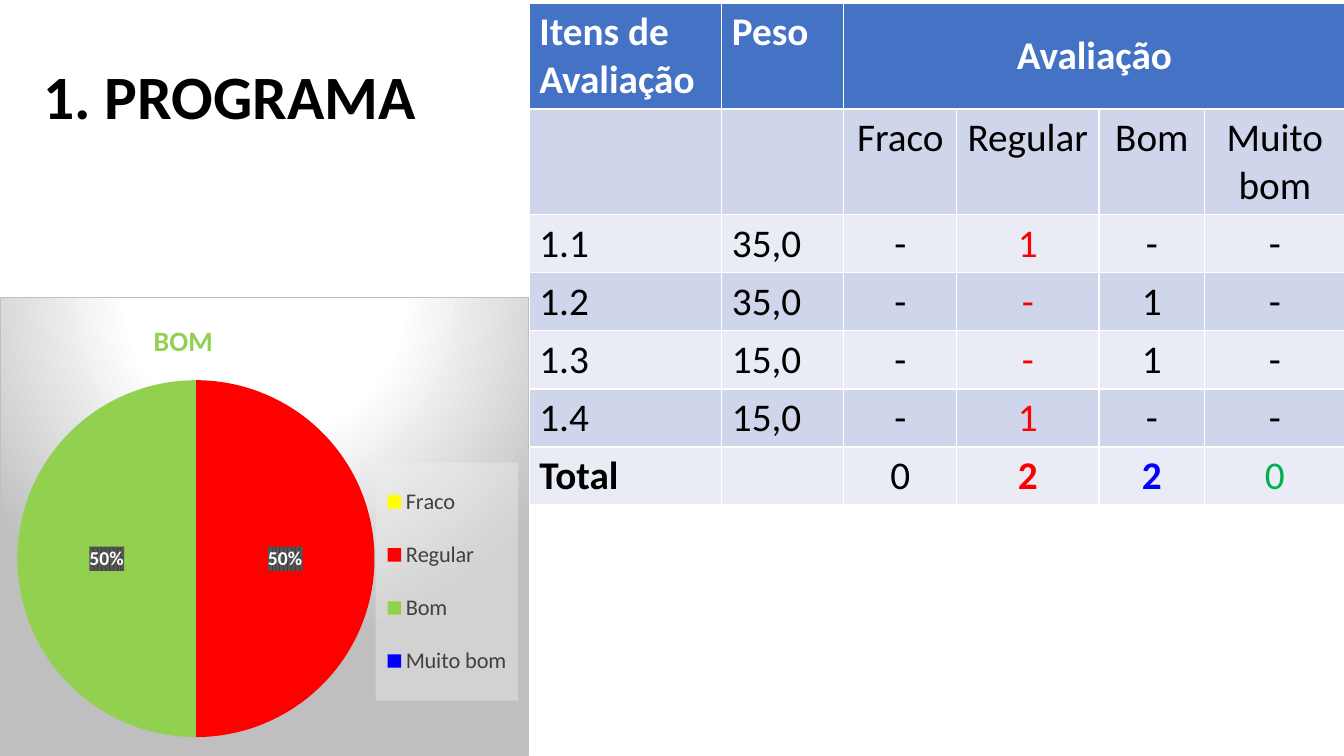
from pptx import Presentation
from pptx.chart.data import CategoryChartData
from pptx.dml.color import RGBColor
from pptx.enum import chart as kinds, text
from pptx.oxml import ns, parse_xml
from pptx.util import Inches, Pt

WHITE = RGBColor(0xFF, 0xFF, 0xFF)
BLACK = RGBColor(0, 0, 0)
GRAY = RGBColor(0x40, 0x40, 0x40)
HEAD = RGBColor(0x44, 0x72, 0xC4)
DARK = RGBColor(0xCF, 0xD5, 0xEA)
LIGHT = RGBColor(0xE9, 0xEB, 0xF5)
YELLOW = RGBColor(0xFF, 0xFF, 0)
RED = RGBColor(0xFF, 0, 0)
LIME = RGBColor(0x92, 0xD0, 0x50)
BLUE = RGBColor(0, 0, 0xFF)
GREEN = RGBColor(0, 0xB0, 0x50)


def style(font, size, color, bold=False):
    for key, val in {"name": "Calibri", "size": Pt(size), "bold": bold}.items():
        setattr(font, key, val)
    font.color.rgb = color


def place(node, spot, **parts):
    for old in node.findall(ns.qn("c:layout")):
        node.remove(old)
    rows = "".join(f'<c:{key} val="{val}"/>' for key, val in parts.items())
    node.insert(spot, parse_xml(
        f'<c:layout {ns.nsdecls("c")}><c:manualLayout>{rows}</c:manualLayout></c:layout>'))


deck = Presentation()
deck.slide_width, deck.slide_height = Inches(13.33), Inches(7.5)
slide = deck.slides.add_slide(deck.slide_layouts[5])

title = slide.shapes.title
for key, val in {"left": 0.33, "top": 0.26, "width": 6.75, "height": 1.45}.items():
    setattr(title, key, Inches(val))
title.text_frame.text = "1. PROGRAMA"
title.text_frame.vertical_anchor = text.MSO_ANCHOR.MIDDLE
line = title.text_frame.paragraphs[0]
line.alignment = text.PP_ALIGN.LEFT
line.line_spacing = 0.9
style(line.runs[0].font, 44, BLACK, True)

names = ["Fraco", "Regular", "Bom", "Muito bom"]
cells = [
    ["Itens de Avaliação", "Peso", "Avaliação", "", "", ""],
    ["", "", *names],
    ["1.1", "35,0", "-", "1", "-", "-"],
    ["1.2", "35,0", "-", "-", "1", "-"],
    ["1.3", "15,0", "-", "-", "1", "-"],
    ["1.4", "15,0", "-", "1", "-", "-"],
    ["Total", "", "0", "2", "2", "0"],
]
last = len(cells) - 1
sums = [BLACK, BLACK, BLACK, RED, BLUE, GREEN]
grid = slide.shapes.add_table(
    len(cells), 6, Inches(5.25), Inches(0.03), Inches(8.08), Inches(3.87)).table
for col, wide in zip(grid.columns, [1.91, 1.21, 1.12, 1.41, 1.05, 1.39]):
    col.width = Inches(wide)
for i, row in enumerate(cells):
    grid.rows[i].height = Inches(0.87 if i == 1 else 0.5)
    for j, word in enumerate(row):
        cell = grid.cell(i, j)
        cell.fill.solid()
        cell.fill.fore_color.rgb = HEAD if i == 0 else DARK if i % 2 else LIGHT
        if not word:
            continue
        cell.text = word
        para = cell.text_frame.paragraphs[0]
        para.alignment = text.PP_ALIGN.CENTER if j > 1 else text.PP_ALIGN.LEFT
        color = BLACK
        if i == 0:
            color = WHITE
        elif i == last:
            color = sums[j]
        elif i > 1 and j == 3:
            color = RED
        bold = i == 0 or (i == last and j in (0, 3, 4))
        style(para.runs[0].font, 28, color, bold)
grid.cell(0, 2).merge(grid.cell(0, 5))
grid.cell(0, 2).vertical_anchor = text.MSO_ANCHOR.MIDDLE

data = CategoryChartData()
data.categories = names
data.add_series("Series 1", [None, 50, 50, None])
chart = slide.shapes.add_chart(
    kinds.XL_CHART_TYPE.PIE, 0, Inches(2.95), Inches(5.25), Inches(4.55), data).chart
style(chart.font, 14, BLACK)

chart.has_title = True
head = chart.chart_title
head.text_frame.text = "BOM"
style(head.text_frame.paragraphs[0].runs[0].font, 20, LIME, True)
place(head._element, 1, xMode="edge", yMode="edge", x=0.28, y=0.04)

chart.has_legend = True
key = chart.legend
key.position = kinds.XL_LEGEND_POSITION.RIGHT
key.include_in_layout = False
place(key._element, 1, xMode="edge", yMode="edge", x=0.71, y=0.36, w=0.27, h=0.52)
style(key.font, 16, GRAY)

space = chart._chartSpace
place(space.chart.plotArea, 0, layoutTarget="inner", xMode="edge", yMode="edge",
      x=0.03, y=0.18, w=0.68, h=0.78)

plot = chart.plots[0]
plot.vary_by_categories = True
pie = plot.series[0]
for i, color in enumerate([YELLOW, RED, LIME, BLUE]):
    fill = pie.points[i].format.fill
    fill.solid()
    fill.fore_color.rgb = color
tags = pie.data_labels
tags.show_value = False
tags.show_percentage = True
tags.position = kinds.XL_LABEL_POSITION.CENTER
style(tags.font, 14, WHITE, True)

back = """<a:gradFill><a:gsLst>
<a:gs pos="0"><a:srgbClr val="FFFFFF"/></a:gs>
<a:gs pos="39000"><a:srgbClr val="FFFFFF"/></a:gs>
<a:gs pos="100000"><a:srgbClr val="BFBFBF"/></a:gs></a:gsLst>
<a:path path="circle"><a:fillToRect l="50000" t="-80000" r="50000" b="180000"/></a:path>
</a:gradFill><a:ln w="9525"><a:solidFill><a:srgbClr val="BFBFBF"/></a:solidFill></a:ln>"""
pale = '<a:solidFill><a:srgbClr val="F2F2F2"><a:alpha val="39000"/></a:srgbClr></a:solidFill>'
dense = """<a:pattFill prst="pct75"><a:fgClr><a:srgbClr val="404040"/></a:fgClr>
<a:bgClr><a:srgbClr val="595959"/></a:bgClr></a:pattFill>"""
for node, look in [(space, back), (key._element, pale), (tags._element, dense)]:
    node.find(ns.qn("c:txPr")).addprevious(
        parse_xml(f'<c:spPr {ns.nsdecls("c", "a")}>{look}</c:spPr>'))

deck.save("out.pptx")
